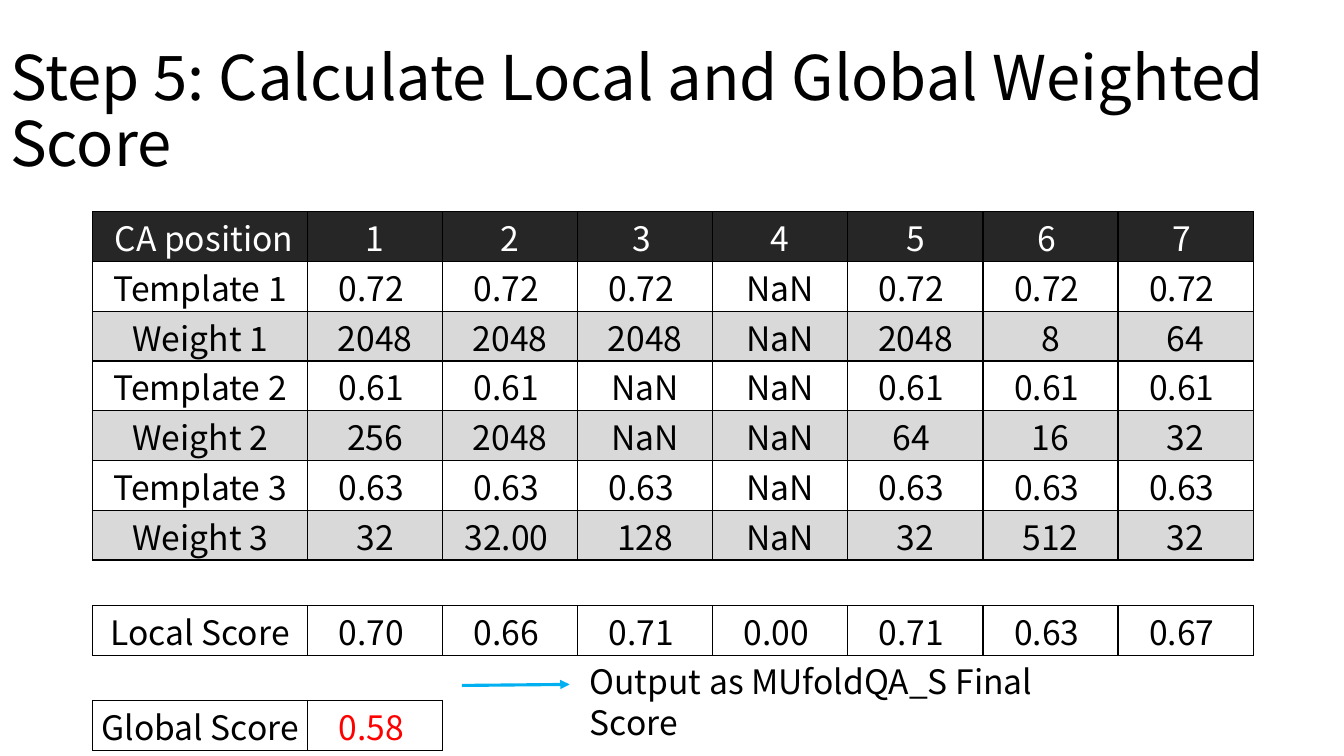
"""Build the slide on local and global weighted scores."""
from dataclasses import dataclass

from lxml.etree import SubElement
from pptx import Presentation
from pptx.dml.color import RGBColor
from pptx.enum.shapes import MSO_CONNECTOR
from pptx.enum.text import MSO_ANCHOR, PP_ALIGN
from pptx.oxml.ns import qn
from pptx.util import Inches, Pt


@dataclass(frozen=True)
class Theme:
    font: str = "Noto Sans CJK SC"
    black: str = "000000"
    white: str = "FFFFFF"
    head: str = "262626"
    band: str = "D9D9D9"
    red: str = "FF0000"
    blue: str = "00B0F0"
    title: int = 44
    body: int = 24


@dataclass(frozen=True)
class Row:
    texts: tuple = ()
    fill: str = ""
    ink: str = Theme.black
    last: str = Theme.black


THEME = Theme()
COLS = 8
ROWS = (
    Row((" CA position", "1", "2", "3 ", "4", "5", "6 ", "7 "), THEME.head, THEME.white, THEME.white),
    Row(("Template 1", "0.72 ", "0.72 ", "0.72 ", "NaN", "0.72 ", "0.72 ", "0.72 ")),
    Row(("Weight 1", "2048", "2048", "2048", "NaN", "2048", "8", "64"), THEME.band),
    Row(("Template 2", "0.61 ", "0.61 ", "NaN", "NaN", "0.61 ", "0.61 ", "0.61 ")),
    Row(("Weight 2", "256", "2048", "NaN", "NaN", "64 ", "16", "32"), THEME.band),
    Row(("Template 3", "0.63 ", "0.63 ", "0.63 ", "NaN", "0.63 ", "0.63 ", "0.63 ")),
    Row(("Weight 3", "32", "32.00 ", "128", "NaN", "32", "512", "32"), THEME.band),
    Row(),
    Row(("Local Score", "0.70 ", "0.66 ", "0.71 ", "0.00 ", "0.71 ", "0.63 ", "0.67 ")),
    Row(),
    Row(("Global Score", "0.58 "), last=THEME.red),
)
CELL = {
    "vertical_anchor": MSO_ANCHOR.BOTTOM,
    "margin_left": Inches(0.01),
    "margin_right": Inches(0.01),
    "margin_top": Inches(0.01),
    "margin_bottom": 0,
}


def write(para, text: str, size: int, ink: str) -> None:
    """Put text in a paragraph with the theme font."""
    para.font.size = Pt(size)
    if text:
        run = para.add_run()
        run.text = text
        for name, value in {"name": THEME.font, "size": Pt(size)}.items():
            setattr(run.font, name, value)
        run.font.color.rgb = RGBColor.from_string(ink)
    else:
        SubElement(para._p, qn("a:endParaRPr"), sz=str(size * 100))


def edge(cell, side: str, shown: bool) -> None:
    """Draw or clear one side of a cell."""
    line = SubElement(cell._tc.get_or_add_tcPr(), qn(f"a:ln{side}"), w=str(Pt(1)))
    if shown:
        fill = SubElement(line, qn("a:solidFill"))
        SubElement(fill, qn("a:srgbClr"), val=THEME.black)
    else:
        SubElement(line, qn("a:noFill"))


def filled(row: int, col: int) -> bool:
    """Tell whether a grid place holds text."""
    return 0 <= row < len(ROWS) and 0 <= col < len(ROWS[row].texts)


def draw_cell(cell, row: int, col: int) -> None:
    """Write, frame and fill one cell."""
    data = ROWS[row]
    here = filled(row, col)
    for name, value in CELL.items():
        setattr(cell, name, value)
    para = cell.text_frame.paragraphs[0]
    para.alignment = PP_ALIGN.CENTER
    ink = data.last if col == len(data.texts) - 1 else data.ink
    write(para, data.texts[col] if here else "", THEME.body, ink)
    for side, down, right in (("L", 0, -1), ("R", 0, 1), ("T", -1, 0), ("B", 1, 0)):
        edge(cell, side, here or filled(row + down, col + right))
    if data.fill:
        cell.fill.solid()
        cell.fill.fore_color.rgb = RGBColor.from_string(data.fill)
    else:
        cell.fill.background()


def draw_table(slide) -> None:
    """Add the score table."""
    frame = slide.shapes.add_table(
        len(ROWS), COLS, Inches(0.92), Inches(2.1), Inches(11.5), Inches(4.92))
    table = frame.table
    table.first_row = table.horz_banding = False
    for col, column in enumerate(table.columns):
        column.width = Inches(1.34 if col else 2.13)
    for row, line in enumerate(table.rows):
        line.height = Inches(0.23 if row < 2 else 0.45)
        for col, cell in enumerate(line.cells):
            draw_cell(cell, row, col)


def draw_title(slide) -> None:
    """Place and fill the title."""
    title = slide.shapes.title
    spot = {"left": 0, "top": 0.4, "width": 13.33, "height": 1.45}
    for name, value in spot.items():
        setattr(title, name, Inches(value))
    title.text_frame.vertical_anchor = MSO_ANCHOR.MIDDLE
    para = title.text_frame.paragraphs[0]
    para.alignment = PP_ALIGN.LEFT
    para.line_spacing = 0.9
    write(para, "Step 5: Calculate Local and Global Weighted Score", THEME.title, THEME.black)


def draw_note(slide) -> None:
    """Add the output note and its arrow."""
    note = slide.shapes.add_textbox(Inches(5.75), Inches(6.51), Inches(5.24), Inches(0.5))
    note.text_frame.word_wrap = True
    write(note.text_frame.paragraphs[0], "Output as MUfoldQA_S Final Score", THEME.body, THEME.black)
    arrow = slide.shapes.add_connector(
        MSO_CONNECTOR.STRAIGHT, Inches(4.58), Inches(6.8), Inches(5.65), Inches(6.79))
    arrow.line.color.rgb = RGBColor.from_string(THEME.blue)
    arrow.line.width = Pt(2.25)
    SubElement(arrow.line._get_or_add_ln(), qn("a:tailEnd"), type="triangle")
    SubElement(arrow._element.spPr, qn("a:effectLst"))


def main() -> None:
    """Build and save the slide."""
    deck = Presentation()
    deck.slide_width = Inches(13.33)
    deck.slide_height = Inches(7.5)
    slide = deck.slides.add_slide(deck.slide_layouts[5])
    draw_title(slide)
    draw_table(slide)
    draw_note(slide)
    deck.save("out.pptx")


if __name__ == "__main__":
    main()
